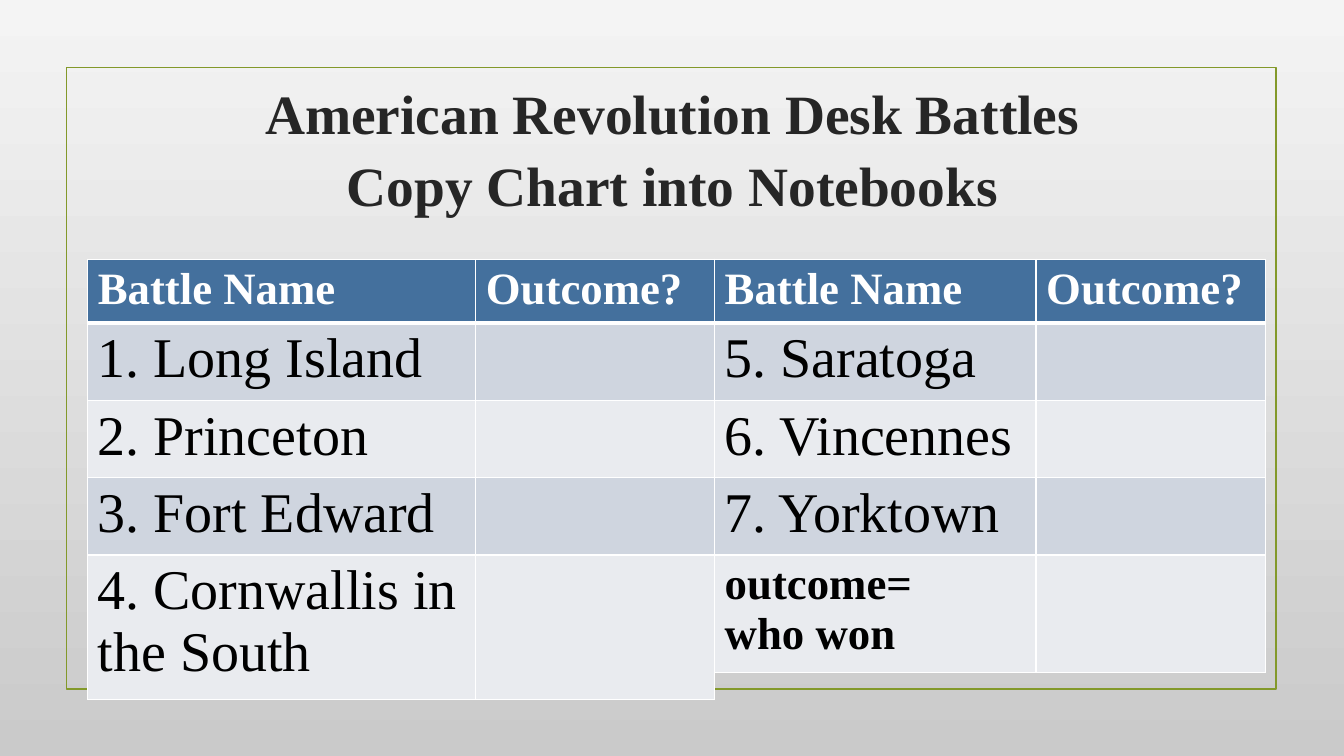
from lxml.etree import SubElement
from pptx import Presentation
from pptx.dml.color import RGBColor
from pptx.enum.shapes import MSO_SHAPE as Shape
from pptx.enum.text import MSO_ANCHOR as Anchor, PP_ALIGN as Align
from pptx.oxml.ns import qn
from pptx.util import Cm, Pt

FONT = "Times New Roman"
PAPER_TOP = RGBColor(0xF4, 0xF4, 0xF4)
PAPER_BOTTOM = RGBColor(0xCA, 0xCA, 0xCA)
OLIVE = RGBColor(0x83, 0x99, 0x2A)
CHARCOAL = RGBColor(0x26, 0x26, 0x26)
BLACK = RGBColor(0, 0, 0)
WHITE = RGBColor(0xFF, 0xFF, 0xFF)
HEADER_BLUE = RGBColor(0x44, 0x70, 0x9D)
BANDS = RGBColor(0xE9, 0xEB, 0xEF), RGBColor(0xCF, 0xD5, 0xDF)

HEADINGS = ["Battle Name", "Outcome?"]
EARLY_BATTLES = ["1. Long Island", "2. Princeton", "3. Fort Edward",
                 "4. Cornwallis in the South"]
LATE_BATTLES = ["5. Saratoga", "6. Vincennes", "7. Yorktown"]
OUTCOME_HINT = "outcome=\nwho won"

HEADER_HEIGHT, BATTLE_HEIGHT = 1.5, 1.82


def write(frame, text, size, color=BLACK, bold=False, align=Align.LEFT,
          spacing=None):
    """Fill a text frame, one paragraph per line of text."""
    frame.text = text
    for paragraph in frame.paragraphs:
        paragraph.alignment = align
        if spacing:
            paragraph.line_spacing = spacing
        for run in paragraph.runs:
            run.font.name = FONT
            run.font.size = Pt(size)
            run.font.bold = bold
            run.font.color.rgb = color


def paint_background(slide):
    fill = slide.background.fill
    fill.gradient()
    fill.gradient_angle = 270
    for stop, color in zip(fill.gradient_stops, (PAPER_TOP, PAPER_BOTTOM)):
        stop.color.rgb = color


def add_border(slide, left, top, width, height):
    border = slide.shapes.add_shape(Shape.RECTANGLE, Cm(left), Cm(top),
                                    Cm(width), Cm(height))
    border.shadow.inherit = False
    border.fill.background()
    border.line.color.rgb = OLIVE
    border.line.width = Pt(1.25)


def add_title(slide, left, top, width, height):
    title = slide.shapes.add_textbox(Cm(left), Cm(top), Cm(width), Cm(height))
    title.text_frame.word_wrap = True
    title.text_frame.vertical_anchor = Anchor.MIDDLE
    write(title.text_frame,
          "American Revolution Desk Battles\nCopy Chart into Notebooks",
          39.6, CHARCOAL, bold=True, align=Align.CENTER, spacing=1.08)


def style_cell(cell, fill, bottom_width=1):
    """Give a cell white borders and a solid fill."""
    properties = cell._tc.get_or_add_tcPr()
    for side, width in zip("LRTB", (1, 1, 1, bottom_width)):
        edge = SubElement(properties, qn(f"a:ln{side}"), w=str(Pt(width)))
        solid = SubElement(edge, qn("a:solidFill"))
        SubElement(solid, qn("a:srgbClr"), val=str(WHITE))
    cell.fill.solid()
    cell.fill.fore_color.rgb = fill


def add_battle_table(slide, left, top, column_widths, last_height, names):
    """Place a table with a header row and one row per battle name."""
    heights = [HEADER_HEIGHT] + [BATTLE_HEIGHT] * (len(names) - 1) + [last_height]
    table = slide.shapes.add_table(
        len(heights), len(column_widths), Cm(left), Cm(top),
        Cm(sum(column_widths)), Cm(sum(heights))).table
    for column, width in zip(table.columns, column_widths):
        column.width = Cm(width)
    for row, height in zip(table.rows, heights):
        row.height = Cm(height)

    for column, heading in enumerate(HEADINGS):
        cell = table.cell(0, column)
        style_cell(cell, HEADER_BLUE, bottom_width=3)
        write(cell.text_frame, heading, 32, WHITE, bold=True)
    for row, name in enumerate(names, start=1):
        for column in range(len(HEADINGS)):
            style_cell(table.cell(row, column), BANDS[row % 2])
        is_hint = name == OUTCOME_HINT
        write(table.cell(row, 0).text_frame, name, 32 if is_hint else 40,
              bold=is_hint)


def main():
    deck = Presentation()
    deck.slide_width, deck.slide_height = Cm(33.87), Cm(19.05)
    slide = deck.slides.add_slide(deck.slide_layouts[6])
    paint_background(slide)
    add_border(slide, 1.68, 1.7, 30.48, 15.67)
    add_title(slide, 3.61, 1.85, 26.67, 3.63)
    add_battle_table(slide, 2.21, 6.53, [9.78, 6.02], 3.38, EARLY_BATTLES)
    add_battle_table(slide, 18.01, 6.53, [8.1, 5.79], 2.76,
                     LATE_BATTLES + [OUTCOME_HINT])
    deck.save("out.pptx")


if __name__ == "__main__":
    main()
